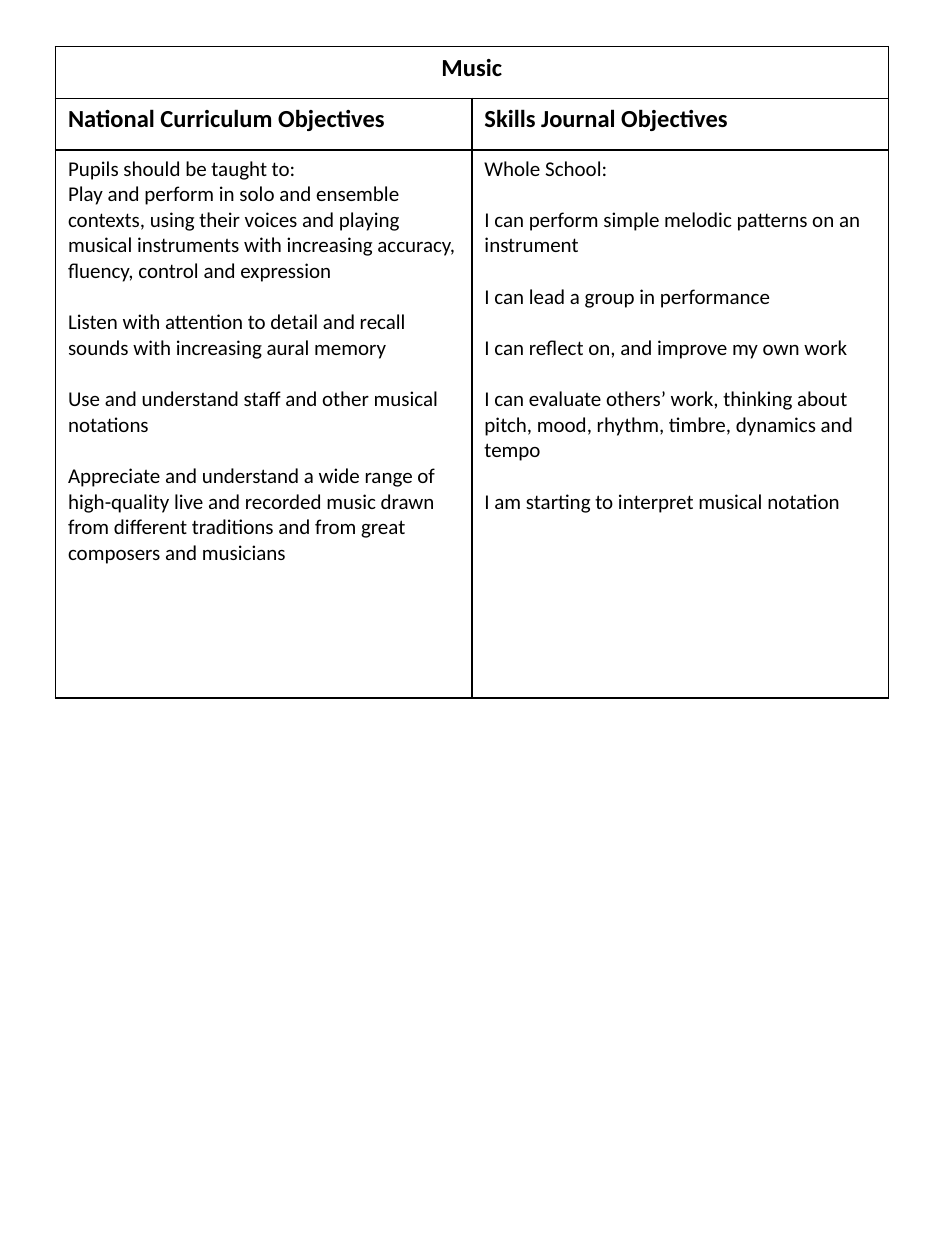
import pptx
import pptx.dml.color
import pptx.enum.text
import pptx.oxml.ns
import pptx.util
from lxml import etree
from pptx.util import Inches, Pt

SUBJECT = "Music"
# Each column: heading, then (text, whether a gap follows)
COLUMNS = [
    ("National Curriculum Objectives", [
        ("Pupils should be taught to:", False),
        ("Play and perform in solo and ensemble contexts, using their voices and "
         "playing musical instruments with increasing accuracy, fluency, control "
         "and expression", True),
        ("Listen with attention to detail and recall sounds with increasing aural "
         "memory", True),
        ("Use and understand staff and other musical notations", True),
        ("Appreciate and understand a wide range of high-quality live and recorded "
         "music drawn from different traditions and from great composers and "
         "musicians", False),
    ]),
    ("Skills Journal Objectives", [
        ("Whole School:", True),
        ("I can perform simple melodic patterns on an instrument", True),
        ("I can lead a group in performance", True),
        ("I can reflect on, and improve my own work", True),
        ("I can evaluate others’ work, thinking about pitch, mood, rhythm, timbre, "
         "dynamics and tempo", True),
        ("I am starting to interpret musical notation", False),
    ]),
]

LEFT, TOP, WIDTH = 0.44, 0.37, 6.61
ROW_HEIGHTS = [0.41, 0.41, 4.35]
GAP = 14.65  # one line of 12 pt text
BLACK = "000000"
HEADING = {"name": "Calibri", "size": Pt(14), "bold": True}
BODY = {"name": "Calibri", "size": Pt(12), "bold": False}


def set_color(color_format, value):
    color_format.rgb = pptx.dml.color.RGBColor.from_string(value)


def write_cell(cell, items, font_format, alignment=None):
    frame = cell.text_frame
    for index, (text, gap_follows) in enumerate(items):
        paragraph = frame.paragraphs[0] if index == 0 else frame.add_paragraph()
        paragraph.alignment = alignment
        paragraph.space_after = Pt(GAP if gap_follows else 0)
        run = paragraph.add_run()
        run.text = text
        for name, value in font_format.items():
            setattr(run.font, name, value)
        set_color(run.font.color, BLACK)


def style_cell(cell):
    """Give the cell black 1 pt borders and no fill."""
    qualified = pptx.oxml.ns.qn
    properties = cell._tc.get_or_add_tcPr()
    for side in ("lnL", "lnR", "lnT", "lnB"):
        line = etree.SubElement(properties, qualified(f"a:{side}"), w=str(Pt(1)))
        fill = etree.SubElement(line, qualified("a:solidFill"))
        etree.SubElement(fill, qualified("a:srgbClr"), val=BLACK)
    cell.fill.background()


def main():
    presentation = pptx.Presentation()
    presentation.slide_width = Inches(7.5)
    presentation.slide_height = Inches(10)
    slide = presentation.slides.add_slide(presentation.slide_layouts[6])

    table = slide.shapes.add_table(
        len(ROW_HEIGHTS), len(COLUMNS), Inches(LEFT), Inches(TOP),
        Inches(WIDTH), Inches(sum(ROW_HEIGHTS))).table
    table.first_row = table.horz_banding = False
    for row, height in zip(table.rows, ROW_HEIGHTS):
        row.height = Inches(height)
    for cell in table.iter_cells():
        style_cell(cell)

    table.cell(0, 0).merge(table.cell(0, len(COLUMNS) - 1))
    write_cell(table.cell(0, 0), [(SUBJECT, False)], HEADING,
               pptx.enum.text.PP_ALIGN.CENTER)
    for index, (heading, objectives) in enumerate(COLUMNS):
        write_cell(table.cell(1, index), [(heading, False)], HEADING)
        write_cell(table.cell(2, index), objectives, BODY)

    presentation.save("out.pptx")


if __name__ == "__main__":
    main()
